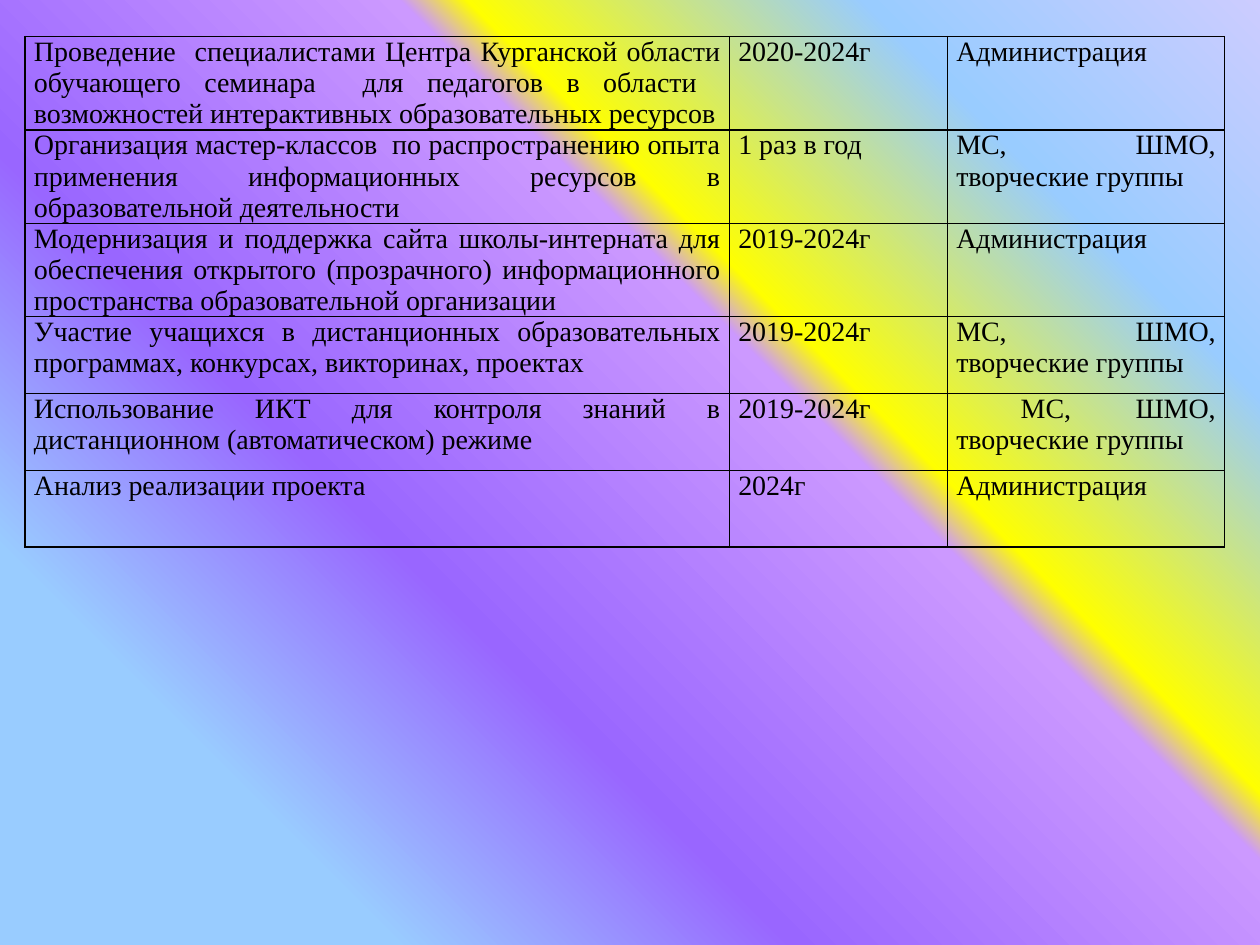
from typing import NamedTuple

from lxml import etree
from pptx import Presentation, util as u
from pptx.dml import color
from pptx.enum import text
from pptx.oxml import ns

SLIDE_WIDTH, SLIDE_HEIGHT = 10, 7.5
TABLE_LEFT, TABLE_TOP = 0.2, 0.29
COLUMN_WIDTHS = (5.59, 1.73, 2.2)
ROW_HEIGHTS = (0.74,) * 3 + (0.61,) * 3
BLACK = "000000"
CELL_FORMAT = {
    "margin_left": u.Inches(0.07),
    "margin_right": u.Inches(0.07),
    "margin_top": 0,
    "margin_bottom": 0,
}
FONT_FORMAT = {"name": "Times New Roman", "size": u.Pt(16), "bold": False}
TABLE_FLAGS = {"first_row": False, "horz_banding": False}


class Stop(NamedTuple):
    percent: int
    hex_color: str


class Activity(NamedTuple):
    task: str
    period: str
    responsible: str


STOPS = (
    Stop(18, "99CCFF"),
    Stop(36, "9966FF"),
    Stop(61, "CC99FF"),
    Stop(64, "FFFF00"),
    Stop(82, "99CCFF"),
    Stop(100, "CCCCFF"),
)
ACTIVITIES = (
    Activity("Проведение  специалистами Центра Курганской области обучающего семинара  "
             "для педагогов в области  возможностей интерактивных образовательных ресурсов",
             "2020-2024г", "Администрация "),
    Activity("Организация мастер-классов  по распространению опыта применения "
             "информационных ресурсов в образовательной деятельности",
             "1 раз в год", "МС, ШМО, творческие группы "),
    Activity("Модернизация и поддержка сайта школы-интерната для обеспечения открытого "
             "(прозрачного) информационного пространства образовательной организации",
             "2019-2024г", "Администрация "),
    Activity("Участие учащихся в дистанционных образовательных программах, конкурсах, "
             "викторинах, проектах",
             "2019-2024г", "МС, ШМО, творческие группы"),
    Activity("Использование ИКТ для контроля знаний в дистанционном (автоматическом) режиме",
             "2019-2024г", " МС, ШМО, творческие группы"),
    Activity("Анализ реализации проекта", "2024г", "Администрация"),
)


def rgb(hex_color: str) -> color.RGBColor:
    return color.RGBColor.from_string(hex_color)


def apply_format(target, values: dict) -> None:
    for name, value in values.items():
        setattr(target, name, value)


def add_element(parent, tag: str, **attributes: str):
    return etree.SubElement(parent, ns.qn(tag), attributes)


def paint_background(slide, stops: tuple[Stop, ...]) -> None:
    fill = slide.background.fill
    fill.gradient()
    fill.gradient_angle = 45
    stop_list = slide.element.find(".//" + ns.qn("a:gsLst"))
    for old_stop in list(stop_list):
        stop_list.remove(old_stop)
    for stop in stops:
        element = add_element(stop_list, "a:gs", pos=str(stop.percent * 1000))
        add_element(element, "a:srgbClr", val=stop.hex_color)


def add_borders(cell, hex_color: str, points: float) -> None:
    properties = cell._tc.get_or_add_tcPr()
    for side in "LRTB":
        line = add_element(properties, f"a:ln{side}", w=str(u.Pt(points)))
        add_element(add_element(line, "a:solidFill"), "a:srgbClr", val=hex_color)


def fill_cell(cell, content: str) -> None:
    apply_format(cell, CELL_FORMAT)
    add_borders(cell, BLACK, 1)
    cell.fill.background()
    paragraph = cell.text_frame.paragraphs[0]
    paragraph.alignment = text.PP_ALIGN.JUSTIFY
    run = paragraph.add_run()
    run.text = content
    apply_format(run.font, FONT_FORMAT)
    run.font.color.rgb = rgb(BLACK)


def add_activity_table(slide, activities: tuple[Activity, ...]) -> None:
    table = slide.shapes.add_table(
        len(activities), len(COLUMN_WIDTHS),
        u.Inches(TABLE_LEFT), u.Inches(TABLE_TOP),
        u.Inches(sum(COLUMN_WIDTHS)), u.Inches(sum(ROW_HEIGHTS)),
    ).table
    apply_format(table, TABLE_FLAGS)
    for column, width in zip(table.columns, COLUMN_WIDTHS):
        column.width = u.Inches(width)
    for row, height, activity in zip(table.rows, ROW_HEIGHTS, activities):
        row.height = u.Inches(height)
        for cell, content in zip(row.cells, activity):
            fill_cell(cell, content)


def main() -> None:
    presentation = Presentation()
    presentation.slide_width = u.Inches(SLIDE_WIDTH)
    presentation.slide_height = u.Inches(SLIDE_HEIGHT)
    slide = presentation.slides.add_slide(presentation.slide_layouts[6])
    paint_background(slide, STOPS)
    add_activity_table(slide, ACTIVITIES)
    presentation.save("out.pptx")


if __name__ == "__main__":
    main()
